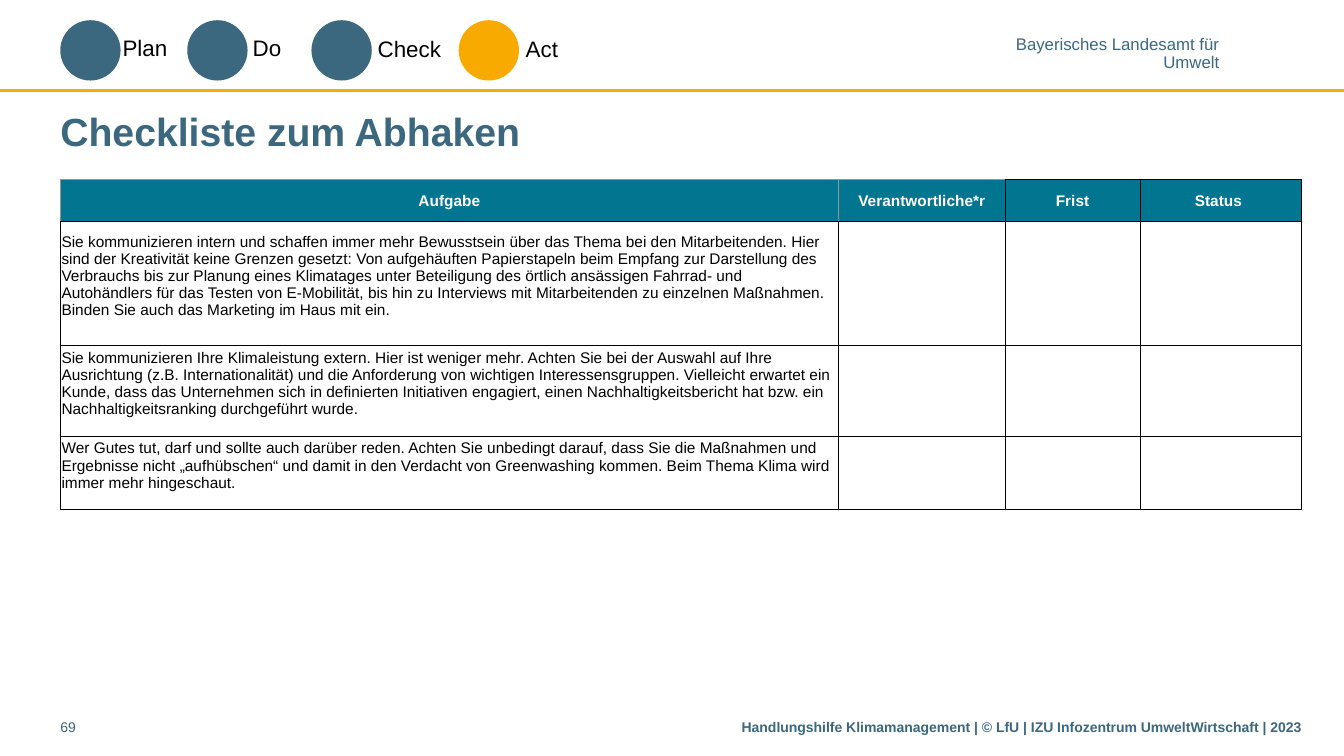
from dataclasses import dataclass

import lxml.etree
import pptx
import pptx.dml.color
import pptx.enum.shapes
import pptx.enum.text
import pptx.oxml.ns
import pptx.util

Cm = pptx.util.Cm
Pt = pptx.util.Pt
ALIGN = pptx.enum.text.PP_ALIGN
ANCHOR = pptx.enum.text.MSO_ANCHOR
SHAPE = pptx.enum.shapes.MSO_SHAPE
qn = pptx.oxml.ns.qn


@dataclass(frozen=True)
class Theme:
    """Colours, font and type sizes of the slide."""
    font: str = "Arial"
    blue: str = "3B687F"
    amber: str = "F9AA00"
    teal: str = "027591"
    grey: str = "969696"
    black: str = "000000"
    white: str = "FFFFFF"
    title: int = 28
    step: int = 16
    office: int = 12
    table: int = 11
    footer: int = 10


STEPS = [("Plan", 1.52, 2.84, 0.74), ("Do", 4.72, 6.12, 0.74),
         ("Check", 7.85, 9.27, 0.76), ("Act", 11.56, 13, 0.76)]
COLUMNS = [("Aufgabe", 19.61), ("Verantwortliche*r", 4.2), ("Frist", 3.4), ("Status ", 4.06)]
HEADER_HEIGHT = 1.06
TASKS = [
    ("Sie kommunizieren intern und schaffen immer mehr Bewusstsein über das Thema bei den "
     "Mitarbeitenden. Hier sind der Kreativität keine Grenzen gesetzt: Von aufgehäuften "
     "Papierstapeln beim Empfang zur Darstellung des Verbrauchs bis zur Planung eines Klimatages "
     "unter Beteiligung des örtlich ansässigen Fahrrad- und Autohändlers für das Testen von "
     "E-Mobilität, bis hin zu Interviews mit Mitarbeitenden zu einzelnen Maßnahmen. Binden Sie "
     "auch das Marketing im Haus mit ein.", 3.13),
    ("Sie kommunizieren Ihre Klimaleistung extern. Hier ist weniger mehr. Achten Sie bei der "
     "Auswahl auf Ihre Ausrichtung (z.B. Internationalität) und die Anforderung von wichtigen "
     "Interessensgruppen. Vielleicht erwartet ein Kunde, dass das Unternehmen sich in definierten "
     "Initiativen engagiert, einen Nachhaltigkeitsbericht hat bzw. ein Nachhaltigkeitsranking "
     "durchgeführt wurde.", 2.17),
    ("Wer Gutes tut, darf und sollte auch darüber reden. Achten Sie unbedingt darauf, dass Sie "
     "die Maßnahmen und Ergebnisse nicht „aufhübschen“ und damit in den Verdacht von "
     "Greenwashing kommen. Beim Thema Klima wird immer mehr hingeschaut.", 1.77),
]


class SlideBuilder:
    """Draws styled elements on the current slide."""

    def __init__(self, slide, theme):
        self.slide = slide
        self.theme = theme

    def color(self, value):
        return pptx.dml.color.RGBColor.from_string(value)

    def set_text(self, tf, text, size, color, bold=False, align=ALIGN.LEFT, spacing=1.0):
        tf.text = text
        for p in tf.paragraphs:
            p.alignment = align
            p.line_spacing = spacing
            for r in p.runs:
                r.font.name = self.theme.font
                r.font.size = Pt(size)
                r.font.bold = bold
                r.font.color.rgb = self.color(color)

    def margins(self, target, side, top, bottom):
        target.margin_left = target.margin_right = Cm(side)
        target.margin_top, target.margin_bottom = Cm(top), Cm(bottom)

    def title(self, text, left, top, width, height):
        sp = self.slide.shapes.title
        sp.left, sp.top, sp.width, sp.height = Cm(left), Cm(top), Cm(width), Cm(height)
        tf = sp.text_frame
        tf.vertical_anchor = ANCHOR.MIDDLE
        tf.auto_size = pptx.enum.text.MSO_AUTO_SIZE.NONE
        self.margins(tf, 0, 0.13, 0.13)
        self.set_text(tf, text, self.theme.title, self.theme.blue, bold=True)

    def text(self, text, left, top, width, height, size, color, side=0, edge=0.13, **style):
        sp = self.slide.shapes.add_textbox(Cm(left), Cm(top), Cm(width), Cm(height))
        tf = sp.text_frame
        tf.word_wrap = True
        self.margins(tf, side, edge, edge)
        self.set_text(tf, text, size, color, **style)

    def circle(self, left, top, size, color):
        sp = self.slide.shapes.add_shape(SHAPE.OVAL, Cm(left), Cm(top), Cm(size), Cm(size))
        sp.shadow.inherit = False
        sp.fill.solid()
        sp.fill.fore_color.rgb = self.color(color)
        sp.line.fill.background()

    def rule(self, top, width, color, weight):
        line = self.slide.shapes.add_connector(
            pptx.enum.shapes.MSO_CONNECTOR.STRAIGHT, 0, Cm(top), Cm(width), Cm(top))
        line.line.color.rgb = self.color(color)
        line.line.width = Pt(weight)
        lxml.etree.SubElement(line._element.spPr, qn("a:effectLst"))

    def borders(self, cell, colors):
        tcPr = cell._tc.get_or_add_tcPr()
        for i, (side, color) in enumerate(zip("LRTB", colors)):
            ln = lxml.etree.Element(qn(f"a:ln{side}"), w=str(Pt(0.5)))
            fill = lxml.etree.SubElement(ln, qn("a:solidFill"))
            lxml.etree.SubElement(fill, qn("a:srgbClr"), val=color)
            tcPr.insert(i, ln)

    def table(self, columns, header_height, tasks, left, top):
        t = self.theme
        heights = [header_height] + [height for _, height in tasks]
        widths = [width for _, width in columns]
        frame = self.slide.shapes.add_table(
            len(heights), len(widths), Cm(left), Cm(top), Cm(sum(widths)), Cm(sum(heights)))
        table = frame.table
        table.horz_banding = False
        table.first_row = False
        for column, width in zip(table.columns, widths):
            column.width = Cm(width)
        for row, height in zip(table.rows, heights):
            row.height = Cm(height)
        rows = [[name for name, _ in columns]]
        rows += [[task] + [""] * (len(columns) - 1) for task, _ in tasks]
        for i, row in enumerate(rows):
            for j, text in enumerate(row):
                cell = table.cell(i, j)
                header = i == 0
                cell.vertical_anchor = ANCHOR.MIDDLE
                self.margins(cell, 0.03, 0.03, 0 if header else 0.4)
                cell.fill.solid()
                cell.fill.fore_color.rgb = self.color(t.teal if header else t.white)
                self.set_text(cell.text_frame, text, t.table, t.white if header else t.black,
                              bold=header, align=ALIGN.CENTER if header else ALIGN.LEFT)
                edge = t.grey if header and j < 2 else t.black
                right = t.grey if header and j == 0 else t.black
                self.borders(cell, (edge, right, edge, t.black))


def main():
    theme = Theme()
    prs = pptx.Presentation()
    prs.slide_width, prs.slide_height = Cm(33.87), Cm(19.05)
    s = SlideBuilder(prs.slides.add_slide(prs.slide_layouts[5]), theme)

    s.rule(2.29, 33.87, theme.amber, 2)
    s.text("Bayerisches Landesamt für\nUmwelt", 24.6, 0.94, 6.13, 0.86, theme.office, theme.blue,
           edge=0, align=ALIGN.RIGHT, spacing=0.85)
    for name, circle_left, label_left, label_top in STEPS:
        s.circle(circle_left, 0.51, 1.52, theme.amber if name == "Act" else theme.blue)
        s.text(name, label_left, label_top, 3.4, 0.94, theme.step, theme.black, side=0.25)

    s.title("Checkliste zum Abhaken", 1.52, 2.59, 31.27, 1.4)
    s.table(COLUMNS, HEADER_HEIGHT, TASKS, 1.52, 4.52)
    s.text("Handlungshilfe Klimamanagement | © LfU | IZU Infozentrum UmweltWirtschaft | 2023",
           15.04, 17.98, 17.75, 0.79, theme.footer, theme.blue, bold=True, align=ALIGN.RIGHT)
    s.text("69", 1.52, 17.98, 1.78, 0.79, theme.footer, theme.blue)
    prs.save("out.pptx")


if __name__ == "__main__":
    main()
